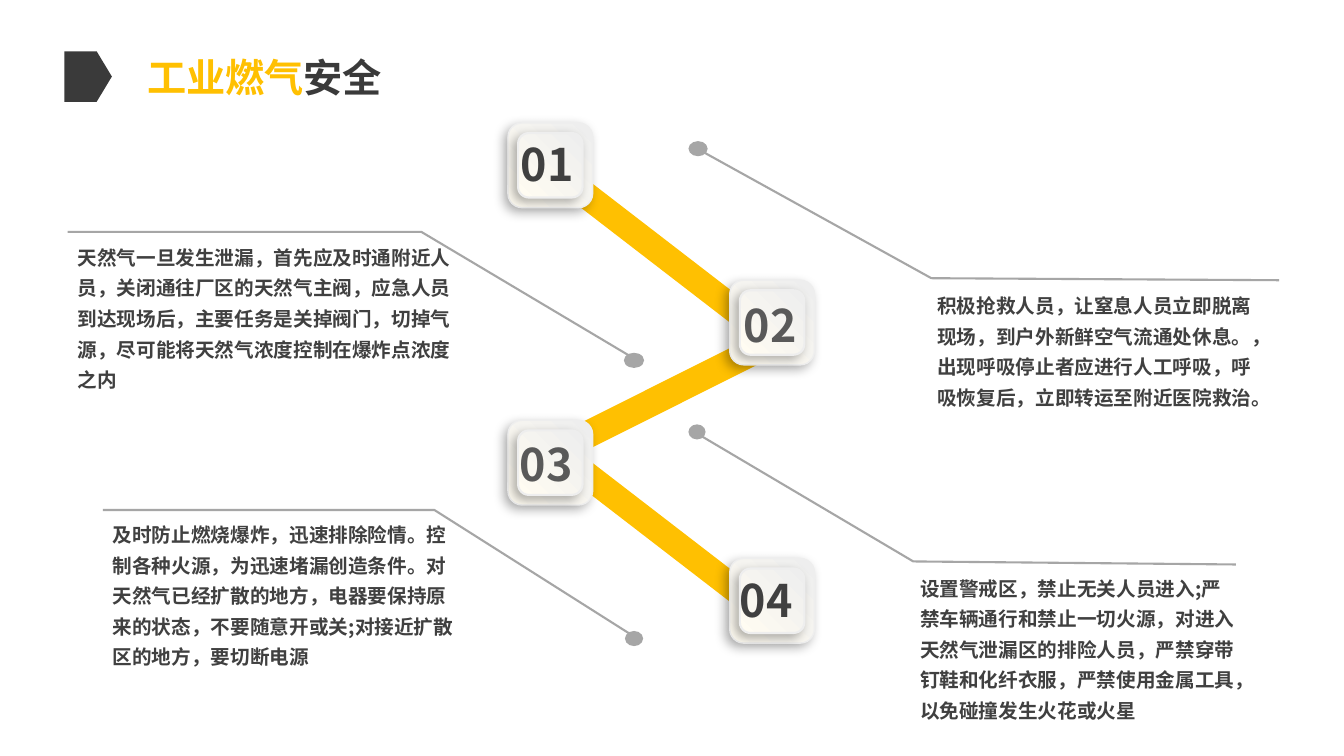
from typing import NamedTuple

import lxml.etree
import pptx
import pptx.dml.color
import pptx.enum.shapes
import pptx.enum.text
import pptx.oxml.ns
import pptx.util

SLIDE_WIDTH, SLIDE_HEIGHT = pptx.util.Inches(13.333), pptx.util.Inches(7.5)
COLUMN, ROW = SLIDE_WIDTH / 40, SLIDE_HEIGHT / 30
FONT = "Noto Sans CJK SC"
YELLOW, DARK, BODY, GREY, PALE, CREAM = (
    "FFC001", "3A3A3A", "404040", "A6A6A6", "EEEEEE", "FFFCF2")
SHAPES = pptx.enum.shapes.MSO_SHAPE


class Area(NamedTuple):
    """Position and size in grid columns and rows."""
    column: float
    row: float
    columns: float
    rows: float

    def emu(self) -> list[int]:
        return [round(share * unit) for share, unit in zip(self, (COLUMN, ROW) * 2)]


class Bar(NamedTuple):
    area: Area
    rotation: float


class Step(NamedTuple):
    number: str
    column: float
    row: float
    number_shift: tuple[float, float]
    color: str


class Callout(NamedTuple):
    text: str
    text_area: Area
    leader: list[tuple[float, float]]
    dot: Area


BARS = [
    Bar(Area(16.17, 15.12, 7.38, 1.08), 153.4),
    Bar(Area(15.27, 20.36, 8.34, 1.04), 37.6),
    Bar(Area(15.27, 9.28, 8.34, 1.04), 37.6),
]
LEFT_STEPS, RIGHT_STEPS = 15.12, 21.72
STEPS = [
    Step("01", LEFT_STEPS, 4.88, (0.09, 0.36), BODY),
    Step("02", RIGHT_STEPS, 11.12, (0.12, 0.48), "595959"),
    Step("03", LEFT_STEPS, 16.68, (0.06, 0.44), "595959"),
    Step("04", RIGHT_STEPS, 22.16, (0, 0.36), BODY),
]
CALLOUTS = [
    Callout("天然气一旦发生泄漏，首先应及时通附近人员，关闭通往厂区的天然气主阀，应急人员"
            "到达现场后，主要任务是关掉阀门，切掉气源，尽可能将天然气浓度控制在爆炸点浓度之内",
            Area(2.01, 9.28, 11.82, 6.52),
            [(18.99, 14.32), (12.54, 9.2), (2.01, 9.2)],
            Area(18.57, 14, 0.6, 0.6)),
    Callout("及时防止燃烧爆炸，迅速排除险情。控制各种火源，为迅速堵漏创造条件。对"
            "天然气已经扩散的地方，电器要保持原来的状态，不要随意开或关;对接近扩"
            "散区的地方，要切断电源",
            Area(3.06, 20.28, 10.74, 6.52),
            [(18.99, 25.36), (12.93, 20.24), (3.06, 20.24)],
            Area(18.6, 25.04, 0.54, 0.6)),
    Callout("设置警戒区，禁止无关人员进入;严禁车辆通行和禁止一切火源，对进入"
            "天然气泄漏区的排险人员，严禁穿带钉鞋和化纤衣服，严禁使用金属工具，"
            "以免碰撞发生火花或火星",
            Area(27.09, 22.4, 9.99, 6.52),
            [(20.64, 17.12), (27.18, 22.28), (36.78, 22.4)],
            Area(20.49, 16.84, 0.51, 0.6)),
    Callout("积极抢救人员，让窒息人员立即脱离现场，到户外新鲜空气流通处休息。，"
            "出现呼吸停止者应进行人工呼吸，呼吸恢复后，立即转运至附近医院救治。",
            Area(27.6, 11.2, 10.47, 5.28),
            [(20.67, 5.84), (27.72, 11.04), (38.07, 11.12)],
            Area(20.49, 5.6, 0.57, 0.6)),
]


def rgb(color: str) -> pptx.dml.color.RGBColor:
    return pptx.dml.color.RGBColor.from_string(color)


def add_flat(slide, preset, area: Area, color: str):
    """Draw a preset shape with a plain fill and no outline."""
    shape = slide.shapes.add_shape(preset, *area.emu())
    shape.shadow.inherit = False
    shape.fill.solid()
    shape.fill.fore_color.rgb = rgb(color)
    shape.line.fill.background()
    return shape


def add_text(slide, area: Area, runs: list[tuple[str, str]], size: float,
             spacing: float = 1.0, align=pptx.enum.text.PP_ALIGN.LEFT) -> None:
    """Write one bold paragraph from pairs of text and colour."""
    frame = slide.shapes.add_textbox(*area.emu()).text_frame
    frame.word_wrap = True
    frame.auto_size = pptx.enum.text.MSO_AUTO_SIZE.SHAPE_TO_FIT_TEXT
    paragraph = frame.paragraphs[0]
    paragraph.alignment, paragraph.line_spacing = align, spacing
    font = paragraph.font
    font.name, font.size, font.bold = FONT, pptx.util.Pt(size), True
    defaults = paragraph._p.pPr.find(pptx.oxml.ns.qn("a:defRPr"))
    lxml.etree.SubElement(defaults, pptx.oxml.ns.qn("a:ea"), typeface=FONT)
    for text, color in runs:
        run = paragraph.add_run()
        run.text = text
        run.font.color.rgb = rgb(color)


def add_raised_tile(slide, area: Area, outline: float) -> None:
    tile = slide.shapes.add_shape(SHAPES.ROUNDED_RECTANGLE, *area.emu())
    tile.fill.gradient()
    tile.fill.gradient_angle = 225
    for stop, color in zip(tile.fill.gradient_stops, (PALE, CREAM)):
        stop.color.rgb = rgb(color)
    tile.line.color.rgb = rgb(PALE)
    tile.line.width = pptx.util.Pt(outline)
    tile.shadow.inherit = False
    qn = pptx.oxml.ns.qn
    effects = tile._element.spPr.find(qn("a:effectLst"))
    shadow = lxml.etree.SubElement(
        effects, qn("a:outerShdw"), blurRad=str(pptx.util.Pt(8)),
        dist=str(pptx.util.Pt(4)), dir=str(135 * 60000), algn="tr", rotWithShape="0")
    black = lxml.etree.SubElement(shadow, qn("a:srgbClr"), val="000000")
    lxml.etree.SubElement(black, qn("a:alpha"), val="30000")


def add_step(slide, step: Step) -> None:
    add_raised_tile(slide, Area(step.column, step.row, 2.52, 3.36), 1)
    add_raised_tile(slide, Area(step.column + 0.3, step.row + 0.4, 1.92, 2.56), 1.5)
    right, down = step.number_shift
    add_text(slide, Area(step.column + right, step.row + down, 3.21, 2.56),
             [(step.number, step.color)], 32)


def add_callout(slide, callout: Callout) -> None:
    add_text(slide, callout.text_area, [(callout.text, BODY)], 14, spacing=1.3)
    points = [(round(x * COLUMN), round(y * ROW)) for x, y in callout.leader]
    builder = slide.shapes.build_freeform(*points[0])
    builder.add_line_segments(points[1:], close=False)
    leader = builder.convert_to_shape()
    leader.shadow.inherit = False
    leader.fill.background()
    leader.line.color.rgb = rgb(GREY)
    leader.line.width = pptx.util.Pt(1.5)
    add_flat(slide, SHAPES.OVAL, callout.dot, GREY)


def main() -> None:
    deck = pptx.Presentation()
    deck.slide_width, deck.slide_height = SLIDE_WIDTH, SLIDE_HEIGHT
    slide = deck.slides.add_slide(deck.slide_layouts[6])
    for bar in BARS:
        add_flat(slide, SHAPES.RECTANGLE, bar.area, YELLOW).rotation = bar.rotation
    for step in STEPS:
        add_step(slide, step)
    for callout in CALLOUTS:
        add_callout(slide, callout)
    flag = add_flat(slide, SHAPES.PENTAGON, Area(1.92, 2.04, 1.41, 2), DARK)
    flag.adjustments[0] = 0.32
    add_text(slide, Area(1.92, 1.92, 11.91, 2.28), [("工业燃气", YELLOW), ("安全", DARK)],
             28, align=pptx.enum.text.PP_ALIGN.CENTER)
    deck.save("out.pptx")


if __name__ == "__main__":
    main()
